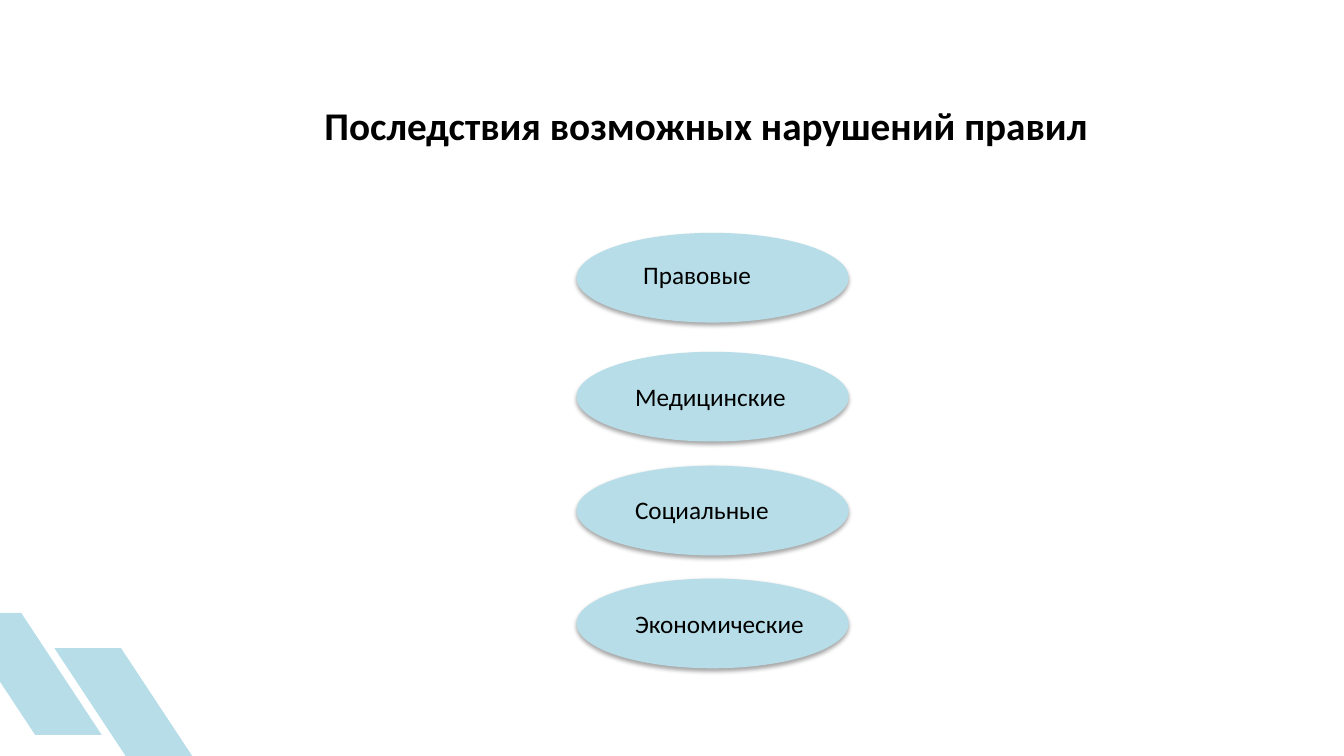
from lxml import etree
from pptx import Presentation
from pptx.dml.color import RGBColor
from pptx.enum.shapes import MSO_SHAPE
from pptx.enum.text import MSO_AUTO_SIZE
from pptx.oxml import parse_xml
from pptx.util import Inches, Pt

ELLIPSE, PARALLELOGRAM = MSO_SHAPE.OVAL, MSO_SHAPE.PARALLELOGRAM
GROW = MSO_AUTO_SIZE.SHAPE_TO_FIT_TEXT
COLORS = {"accent": "B7DEE8", "text": "000000", "shadow": "000000"}
FONT = "Calibri"
SHADOW = f"""<a:effectLst xmlns:a="http://schemas.openxmlformats.org/drawingml/2006/main">
<a:outerShdw blurRad="{Pt(3)}" dist="{Pt(1.8)}" dir="5400000" rotWithShape="0">
<a:srgbClr val="{COLORS['shadow']}"><a:alpha val="35000"/></a:srgbClr>
</a:outerShdw></a:effectLst>"""

deck = Presentation()
deck.slide_width, deck.slide_height = Inches(13.33), Inches(7.5)
slide = deck.slides.add_slide(deck.slide_layouts[6])


def area(left, top, width, height):
    """Turn percentages of the slide's width and height into lengths."""
    across, down = deck.slide_width / 100, deck.slide_height / 100
    return [round(n) for n in (left * across, top * down, width * across, height * down)]


def add_words(words, place, size, bold=False, inset=None):
    frame = slide.shapes.add_textbox(*place).text_frame
    frame.word_wrap = True
    frame.auto_size = GROW
    if inset is not None:
        frame.margin_left = frame.margin_right = inset
        frame.margin_top = frame.margin_bottom = inset
    run = frame.paragraphs[0].add_run()
    run.text = words
    run.font.name, run.font.size, run.font.bold = FONT, Pt(size), bold
    run.font.color.rgb = RGBColor.from_string(COLORS["text"])


# Corner stripes
for left, top in [(4.05, 85.73), (-3.38, 81.07)]:
    stripe = slide.shapes.add_shape(PARALLELOGRAM, *area(left, top, 10.95, 16.13))
    stripe.adjustments[0] = 0.66
    stripe.fill.solid()
    stripe.fill.fore_color.rgb = RGBColor.from_string(COLORS["accent"])
    stripe.line.fill.background()
    stripe.shadow.inherit = False
    stripe._element.spPr.xfrm.set("flipH", "1")

# Consequences: wording, ellipse top, label left, label top
consequences = [
    ("Правовые", 30.8, 47.48, 33.6),
    ("Медицинские", 46.53, 46.88, 49.73),
    ("Социальные", 61.6, 46.88, 64.67),
    ("Экономические", 76.53, 46.88, 79.87),
]
for wording, ellipse_top, label_left, label_top in consequences:
    ellipse = slide.shapes.add_shape(ELLIPSE, *area(42.9, ellipse_top, 20.25, 11.87))
    ellipse.fill.solid()
    ellipse.fill.fore_color.rgb = RGBColor.from_string(COLORS["accent"])
    ellipse.line.fill.background()
    ellipse._element.spPr.append(parse_xml(etree.tostring(etree.fromstring(SHADOW))))
    add_words(wording, area(label_left, label_top, 15.6, 5.33), 18, inset=Inches(0.05))

add_words("Последствия возможных нарушений правил", area(23.4, 12.8, 69, 7.6), 28, bold=True)

deck.save("out.pptx")
